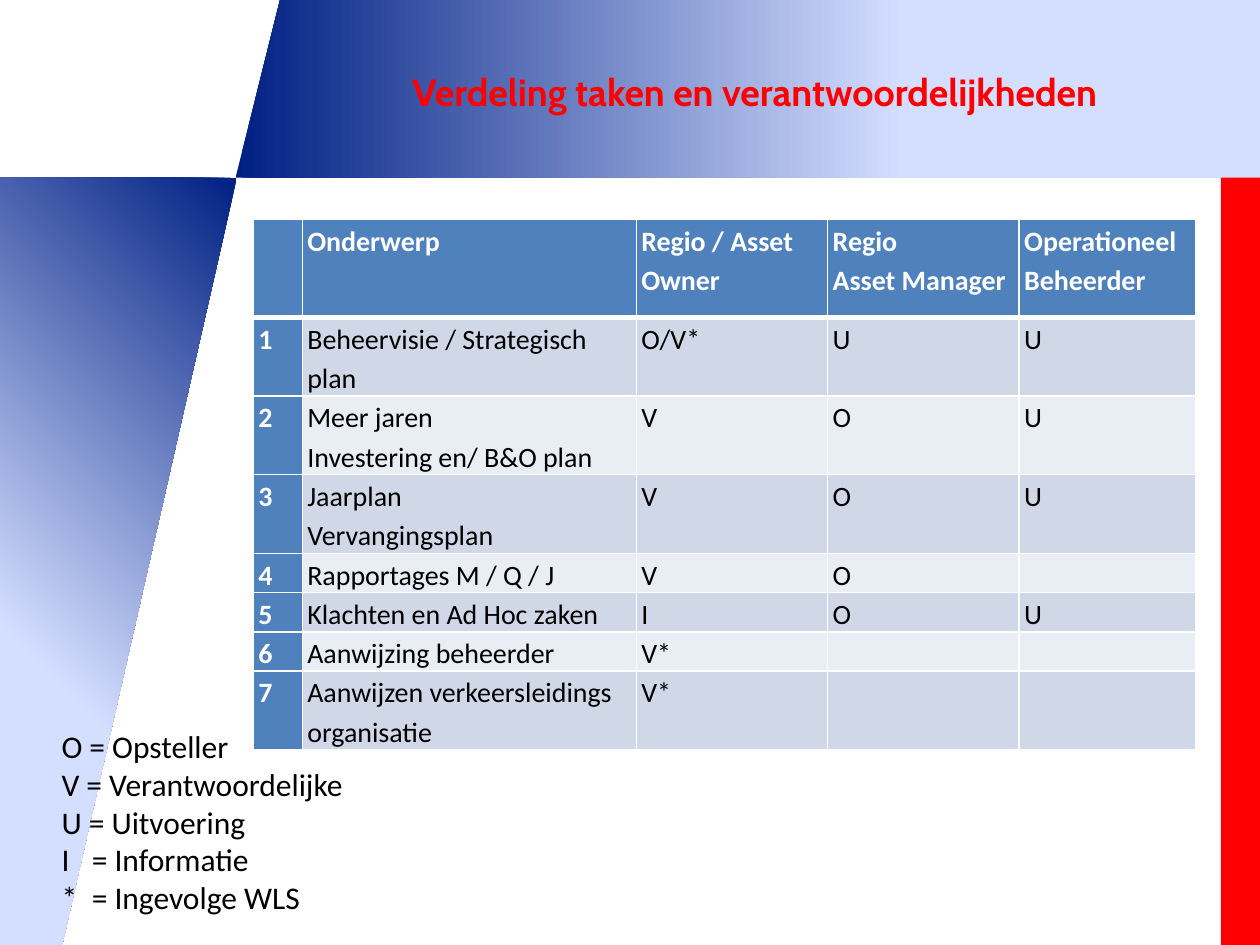
from lxml.etree import SubElement
from pptx import Presentation
from pptx.dml.color import RGBColor
from pptx.enum.shapes import MSO_SHAPE
from pptx.enum.text import MSO_ANCHOR, PP_ALIGN
from pptx.oxml.ns import qn
from pptx.util import Inches, Pt

WHITE, BLACK, RED, BLUE = "FFFFFF", "000000", "FF0000", "4F81BD"
BANDS = ["D0D8E8", "E9EDF4"]
GRADIENT = [(0, "002083"), (53, "D4DEFF"), (83, "D4DEFF"), (100, "96AB94")]

deck = Presentation()
deck.slide_width, deck.slide_height = Inches(10), Inches(7.5)
slide = deck.slides.add_slide(deck.slide_layouts[6])


def share(left, top, width, height):
    """Turn percentages of the slide's size into lengths."""
    return [round(part * side / 100) for part, side in zip(
        (left, top, width, height), (deck.slide_width, deck.slide_height) * 2)]


def style(paragraph, size, color, bold=False, face="Calibri"):
    font = paragraph.font
    font.size, font.bold, font.name = Pt(size), bold, face
    font.color.rgb = RGBColor.from_string(color)


# Background: two gradient slants (slant, angle, place) and a red bar
for slant, angle, place in [
    (0.25, 0, (18.7, 0, 100, 18.8)),
    (0.45, 225, (-15.6, 18.8, 34.4, 90.67)),
]:
    panel = slide.shapes.add_shape(MSO_SHAPE.PARALLELOGRAM, *share(*place))
    panel.adjustments[0] = slant
    panel.shadow.inherit = False
    panel.line.fill.background()
    panel.fill.gradient()
    panel.fill.gradient_angle = angle
    stops = panel._element.spPr.find(qn("a:gradFill")).find(qn("a:gsLst"))
    for old_stop in list(stops):
        stops.remove(old_stop)
    for position, color in GRADIENT:
        stop = SubElement(stops, qn("a:gs"), pos=str(position * 1000))
        SubElement(stop, qn("a:srgbClr"), val=color)

red_bar = slide.shapes.add_shape(MSO_SHAPE.RECTANGLE, *share(96.9, 18.8, 3.1, 81.2))
red_bar.shadow.inherit = False
red_bar.line.fill.background()
red_bar.fill.solid()
red_bar.fill.fore_color.rgb = RGBColor.from_string(RED)

title = slide.shapes.add_textbox(*share(24.8, 4, 70.2, 11.33)).text_frame
title.word_wrap = True
title.vertical_anchor = MSO_ANCHOR.MIDDLE
title.text = "Verdeling taken en verantwoordelijkheden"
title.paragraphs[0].alignment = PP_ALIGN.CENTER
style(title.paragraphs[0], 21.6, RED, True, "Cabin")

# Task table: header, then subject and the role of each party
tasks = [
    ["", "Onderwerp", "Regio / Asset Owner", "Regio\nAsset Manager",
     "Operationeel\nBeheerder"],
    ["1", "Beheervisie / Strategisch plan", "O/V*", "U", "U"],
    ["2", "Meer jaren\nInvestering en/ B&O plan", "V", "O", "U"],
    ["3", "Jaarplan\nVervangingsplan", "V", "O", "U"],
    ["4", "Rapportages M / Q / J", "V", "O", ""],
    ["5", "Klachten en Ad Hoc zaken", "I", "O", "U"],
    ["6", "Aanwijzing beheerder", "V*", "", ""],
    ["7", "Aanwijzen verkeersleidings organisatie", "V*", "", ""],
]
column_shares = [3.9, 26.5, 15.2, 15.2, 14]
line_share = 4.16
row_shares = [10.4] + [line_share * lines for lines in (2, 2, 2, 1, 1, 1, 2)]
table = slide.shapes.add_table(
    len(tasks), len(column_shares),
    *share(20.1, 23.2, sum(column_shares), sum(row_shares))).table
table.first_col = True
for column, width in zip(table.columns, column_shares):
    column.width = round(deck.slide_width * width / 100)
for row, height in zip(table.rows, row_shares):
    row.height = round(deck.slide_height * height / 100)

for r, task in enumerate(tasks):
    for c, wording in enumerate(task):
        cell = table.cell(r, c)
        heading = r == 0 or c == 0
        cell.margin_left = cell.margin_right = Inches(0.04)
        cell.margin_top = cell.margin_bottom = 0
        for side in "LRTB":
            thick = (r, side) in [(0, "B"), (1, "T")]
            border = SubElement(cell._tc.get_or_add_tcPr(), qn(f"a:ln{side}"),
                                w=str(Pt(3 if thick else 1)))
            SubElement(SubElement(border, qn("a:solidFill")),
                       qn("a:srgbClr"), val=WHITE)
        cell.fill.solid()
        cell.fill.fore_color.rgb = RGBColor.from_string(
            BLUE if heading else BANDS[(r - 1) % 2])
        cell.text = wording
        for paragraph in cell.text_frame.paragraphs:
            paragraph.line_spacing = 1.15
            style(paragraph, 16, WHITE if heading else BLACK, heading)

# Legend of the role letters
legend = slide.shapes.add_textbox(*share(3.9, 76.27, 50, 21.6)).text_frame
legend.word_wrap = True
legend.text = "\n".join([
    "O = Opsteller", "V = Verantwoordelijke", "U = Uitvoering",
    "I\t= Informatie", "*\t= Ingevolge WLS"])
for paragraph in legend.paragraphs:
    tabs = SubElement(paragraph._p.get_or_add_pPr(), qn("a:tabLst"))
    SubElement(tabs, qn("a:tab"), pos=str(Inches(0.24)), algn="l")
    style(paragraph, 18, BLACK)

deck.save("out.pptx")
